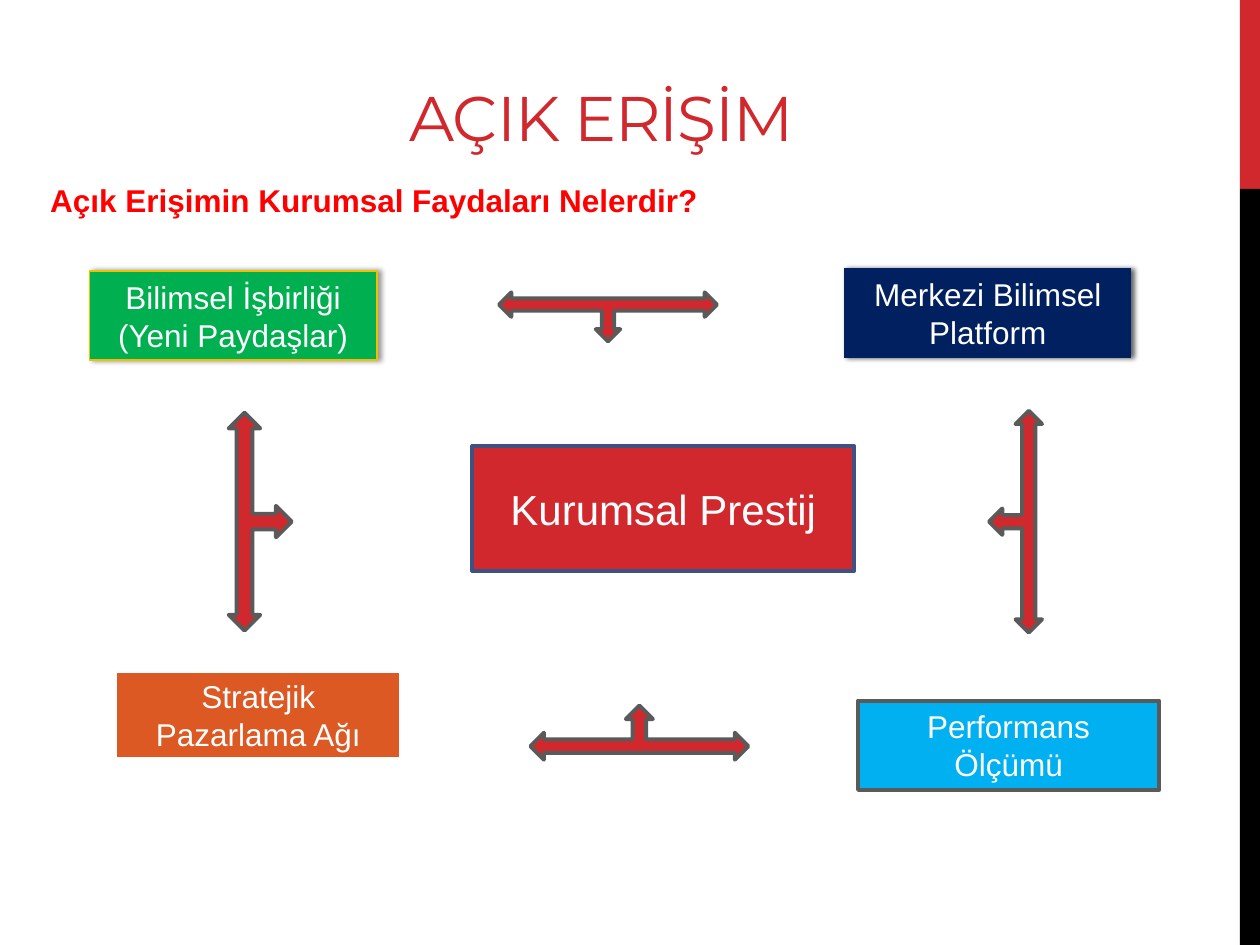
from dataclasses import dataclass
from lxml.etree import SubElement as Sub
from pptx import Presentation
from pptx.dml.color import RGBColor as Rgb
from pptx.enum.shapes import MSO_SHAPE as Kind
from pptx.enum.text import MSO_ANCHOR as Anchor, PP_ALIGN as Align
from pptx.oxml.ns import qn
from pptx.util import Inches, Pt

COLS, ROWS = 100, 75


@dataclass(frozen=True)
class Theme:
    red: str = "D1282E"
    black: str = "000000"
    white: str = "FFFFFF"
    alert: str = "FF0000"
    green: str = "00B050"
    gold: str = "F1BE00"
    navy: str = "002060"
    sky: str = "00B0F0"
    rust: str = "DC5924"
    gray: str = "5A5A5A"
    slate: str = "3D5182"
    sans: str = "Arial"
    display: str = "Montserrat"
    title: int = 36
    hub: int = 24
    body: int = 18


T = Theme()


def place(box, x, y, w, h):
    return [Inches(n) for n in ((box[0] + x) * 10 / COLS, (box[1] + y) * 7.5 / ROWS,
                                w * 10 / COLS, h * 7.5 / ROWS)]


def write(frame, text, size=T.body, color=T.white, font=T.sans, bold=False,
          align=Align.CENTER, anchor=Anchor.MIDDLE, wrap=True, track=None):
    frame.word_wrap = wrap
    frame.vertical_anchor = anchor
    for i, line in enumerate(text.split("\n")):
        para = frame.paragraphs[0] if i == 0 else frame.add_paragraph()
        para.alignment = align
        run = para.add_run()
        run.text = line
        run.font.size, run.font.name, run.font.bold = Pt(size), font, bold
        run.font.color.rgb = Rgb.from_string(color)
        if track:
            run.font._element.set("spc", str(track))


def shade(shape, alpha, blur, dist):
    pool = shape._element.spPr.find(qn("a:effectLst"))
    cast = Sub(pool, qn("a:outerShdw"), blurRad=str(Pt(blur)), dist=str(Pt(dist)),
               dir="0", rotWithShape="0")
    tone = Sub(cast, qn("a:srgbClr"), val=T.black)
    Sub(tone, qn("a:alpha"), val=str(alpha * 1000))


def draw(slide, kind, spot, fill, line=None, width=2.25):
    shape = slide.shapes.add_shape(kind, *spot)
    shape.shadow.inherit = False
    shape.fill.solid()
    shape.fill.fore_color.rgb = Rgb.from_string(fill)
    if line:
        shape.line.color.rgb = Rgb.from_string(line)
        shape.line.width = Pt(width)
    else:
        shape.line.fill.background()
    return shape


def rail(slide, box):
    wide, high = box[2:]
    cut = high / 5
    draw(slide, Kind.RECTANGLE, place(box, 0, 0, wide, cut), T.red)
    draw(slide, Kind.RECTANGLE, place(box, 0, cut, wide, high - cut), T.black)


def head(slide, box):
    title = slide.shapes.add_textbox(*place(box, 13.1, 0, 63.3, 9.8))
    write(title.text_frame, "AÇIK ERİŞİM", size=T.title, color=T.red,
          font=T.display, anchor=Anchor.BOTTOM, track=-60)
    ask = slide.shapes.add_textbox(*place(box, 0, 11, 53.9, 4))
    write(ask.text_frame, "Açık Erişimin Kurumsal Faydaları Nelerdir?", color=T.alert,
          bold=True, align=Align.LEFT, anchor=Anchor.TOP, wrap=False)


def chart(slide, box):
    cards = [
        ("Kurumsal Prestij", (30.4, 14.1, 30.3, 9.9), T.red, T.slate, 2.25, T.hub, None),
        ("Bilimsel İşbirliği\n(Yeni Paydaşlar)", (0, 0.2, 22.8, 7.1),
         T.green, T.gold, 1, T.body, (40, 3.1, 1.8)),
        ("Merkezi Bilimsel Platform", (59.9, 0, 22.8, 7.1),
         T.navy, None, 0, T.body, (60, 3, 1.5)),
        ("Performans Ölçümü", (61, 34.3, 23.9, 7.1), T.sky, T.gray, 2.25, T.body, None),
        ("Stratejik Pazarlama Ağı", (2, 31.9, 22.8, 7.1),
         T.rust, T.white, 3.25, T.body, None),
    ]
    for text, spot, fill, line, width, size, cast in cards:
        card = draw(slide, Kind.FLOWCHART_PROCESS, place(box, *spot), fill, line, width)
        write(card.text_frame, text, size=size)
        if cast:
            shade(card, *cast)
    arrows = [(35, 34.7, 17.3, 4.3), (4.9, 17.6, 17.3, 5),
              (32.5, 1.9, 17.3, 3.9), (64.7, 18, 17.6, 4.2)]
    for turn, spot in enumerate(arrows):
        arrow = draw(slide, Kind.LEFT_RIGHT_UP_ARROW, place(box, *spot), T.red, T.gray)
        arrow.rotation = turn * 90


def main():
    deck = Presentation()
    deck.slide_width, deck.slide_height = Inches(10), Inches(7.5)
    slide = deck.slides.add_slide(deck.slide_layouts[6])
    rail(slide, (98.4, 0, 1.6, ROWS))
    head(slide, (3, 2.9, 76.4, 15))
    chart(slide, (7.1, 21.3, 84.9, 41.4))
    deck.save("out.pptx")


if __name__ == "__main__":
    main()
